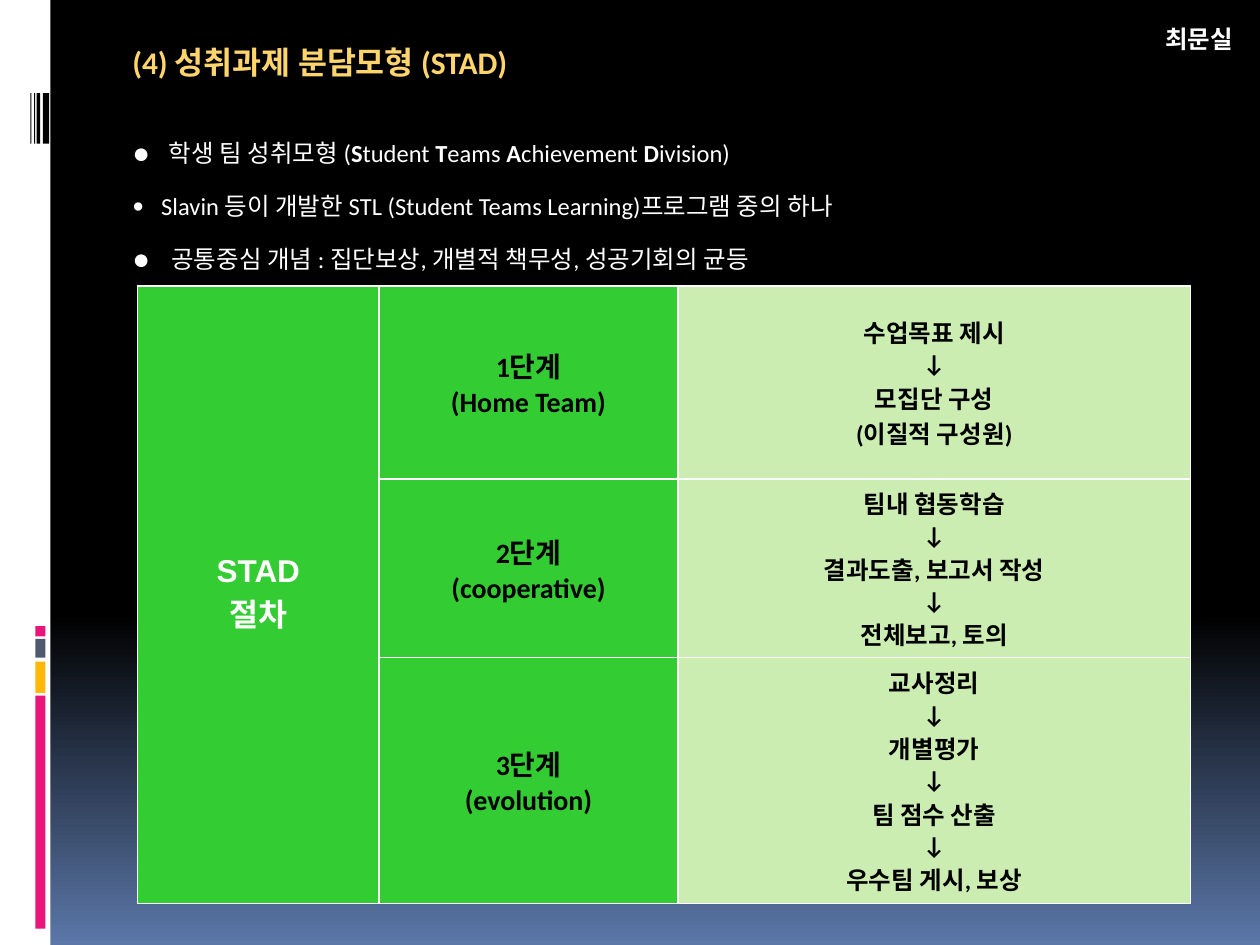
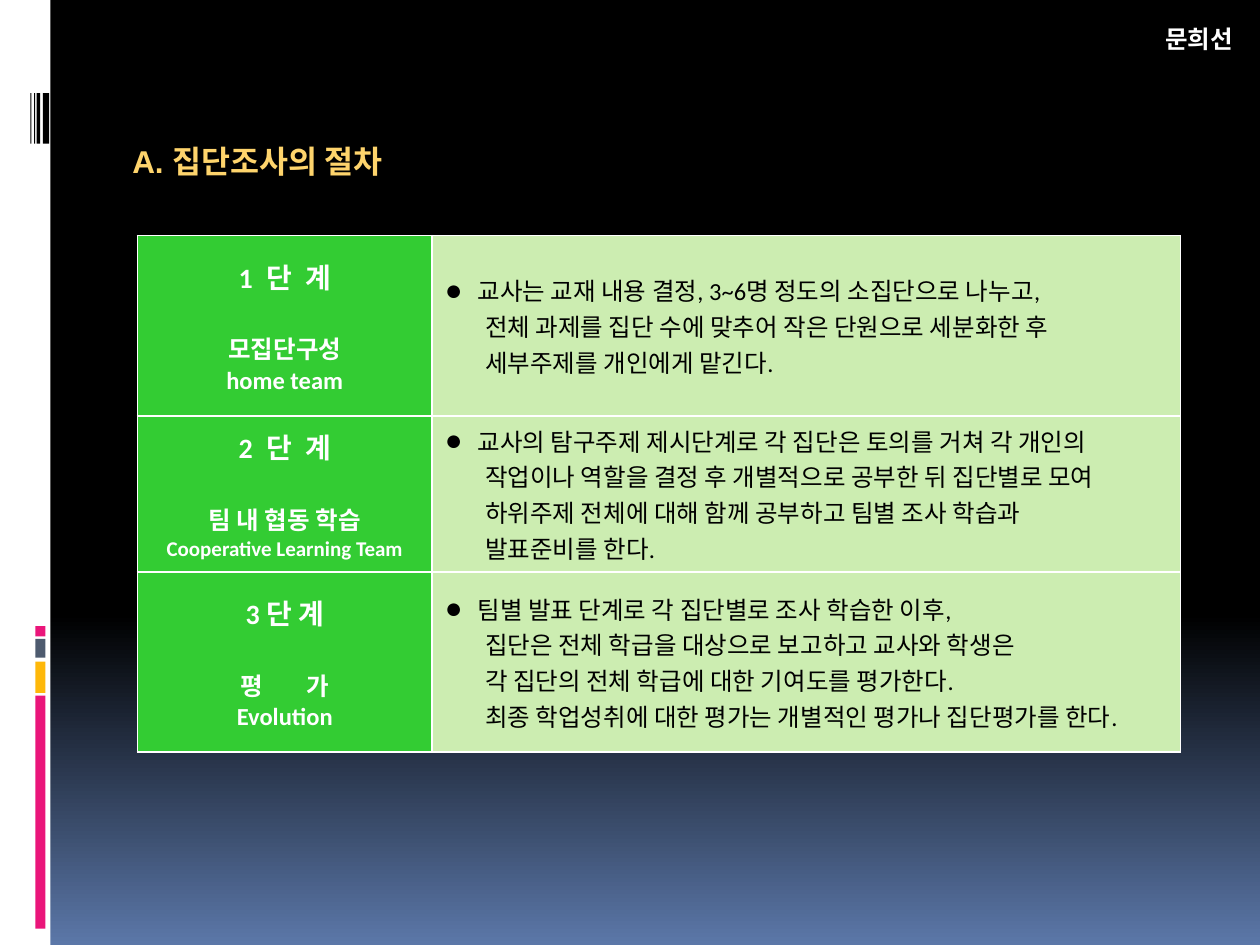
from dataclasses import dataclass, replace

from lxml.etree import SubElement
from pptx import Presentation
from pptx.dml.color import RGBColor
from pptx.enum.shapes import MSO_SHAPE
from pptx.enum.text import MSO_ANCHOR, PP_ALIGN
from pptx.oxml.ns import qn
from pptx.util import Inches, Pt

COLORS = {
    "black": "000000", "white": "FFFFFF", "sky": "5B77A8", "title": "FED46C",
    "pink": "EA157A", "amber": "FEB80A", "slate": "4E5B6F",
    "green": "33CC33", "pale": "CCEDB1",
}
GRID_COLS, GRID_ROWS = 100, 75
CELL = Inches(0.1)

BARCODE = [(3.4, 0.5), (2.9, 0.3), (2.7, 0.1), (2.4, 0.1)]  # column, width
STRIPES = [(55.2, 18.5, "pink"), (52.5, 2.5, "amber"),
           (50.7, 1.5, "slate"), (49.7, 0.8, "pink")]       # row, height, colour


@dataclass
class Line:
    """One paragraph; *stars* flip the weight, mark is a bullet size in percent."""
    text: str
    size: int = 14
    color: str = "black"
    bold: bool = True
    font: str = "Calibri"
    align: PP_ALIGN = PP_ALIGN.LEFT
    mark: int = 0
    indent: float = 0
    before: float = 0
    after: float = 0
    leading: float = 0
    spread: float = 0


class Deck:
    def __init__(self):
        self.prs = Presentation()
        self.prs.slide_width = CELL * GRID_COLS
        self.prs.slide_height = CELL * GRID_ROWS
        self.s = None
        self.set_background([(0, "black"), (65, "black"), (100, "sky")])

    def set_background(self, stops):
        master = self.prs.slide_master
        fill = master.background.fill
        fill.gradient()
        fill.gradient_angle = 270
        gs_lst = next(master.element.iter(qn("a:gsLst")))
        for gs in list(gs_lst):
            gs_lst.remove(gs)
        for pos, color in stops:
            gs = SubElement(gs_lst, qn("a:gs"), pos=str(pos * 1000))
            SubElement(gs, qn("a:srgbClr"), val=COLORS[color])

    def add_slide(self, author, title, title_bottom):
        self.s = self.prs.slides.add_slide(self.prs.slide_layouts[6])
        self.band(0, 0, 4, GRID_ROWS, "white")
        for col, width in BARCODE:
            self.band(col, 7.4, width, 4, "black")
        for row, height, color in STRIPES:
            self.band(2.8, row, 0.8, height, color)
        self.text(9.4, title_bottom - 6, 85, 6, [replace(title, size=18, color="title", leading=25)])
        self.text(91.4, 0, 8.6, 4.7, [Line(author, color="white", leading=25)])

    def band(self, col, row, width, height, color):
        sp = self.s.shapes.add_shape(MSO_SHAPE.RECTANGLE, *self.place(col, row, width, height))
        sp.shadow.inherit = False
        sp.fill.solid()
        sp.fill.fore_color.rgb = self.rgb(color)
        sp.line.fill.background()

    def text(self, col, row, width, height, lines):
        sp = self.s.shapes.add_textbox(*self.place(col, row, width, height))
        tf = sp.text_frame
        tf.word_wrap = True
        tf.vertical_anchor = MSO_ANCHOR.BOTTOM
        tf.margin_left = Inches(0.11)
        self.set_lines(tf, lines)

    def table(self, col, row, widths, heights, rows, fills):
        """Rows hold lists of lines; a None cell is merged into the one above."""
        frame = self.s.shapes.add_table(
            len(heights), len(widths), *self.place(col, row, sum(widths), sum(heights)))
        table = frame.table
        table.first_row = table.horz_banding = False
        for column, width in zip(table.columns, widths):
            column.width = int(CELL * width)
        for i, (height, cells) in enumerate(zip(heights, rows)):
            table.rows[i].height = int(CELL * height)
            for j, (lines, fill) in enumerate(zip(cells, fills)):
                cell = table.cell(i, j)
                self.border(cell)
                cell.fill.solid()
                cell.fill.fore_color.rgb = self.rgb(fill)
                cell.vertical_anchor = MSO_ANCHOR.MIDDLE
                if lines:
                    self.set_lines(cell.text_frame, lines)
        for j in range(len(widths)):
            covered = [i for i, cells in enumerate(rows) if cells[j] is None]
            if covered:
                table.cell(covered[0] - 1, j).merge(table.cell(covered[-1], j))

    def set_lines(self, tf, lines):
        for i, line in enumerate(lines):
            p = tf.add_paragraph() if i else tf.paragraphs[0]
            self.format_paragraph(p, line)
            if line.spread:
                r = self.run(p, line.text[:-1], line)
                r._r.get_or_add_rPr().set("spc", str(int(line.spread * 100)))
                self.run(p, line.text[-1], line)
                continue
            for k, part in enumerate(line.text.split("*")):
                if part:
                    self.run(p, part, line, line.bold != bool(k % 2))

    def format_paragraph(self, p, line):
        p.alignment = line.align
        p.space_before, p.space_after = Pt(line.before), Pt(line.after)
        if line.leading:
            p.line_spacing = Pt(line.leading)
        pPr = p._p.get_or_add_pPr()
        if line.indent:
            pPr.set("marL", str(Inches(line.indent)))
        if line.mark:
            pPr.set("indent", str(-Inches(line.indent)))
            SubElement(pPr, qn("a:buSzPct"), val=str(line.mark * 1000))
            SubElement(pPr, qn("a:buFont"), typeface="Arial")
            SubElement(pPr, qn("a:buChar"), char="●")

    def run(self, p, text, line, bold=True):
        r = p.add_run()
        r.text = text
        r.font.name, r.font.size, r.font.bold = line.font, Pt(line.size), bold
        r.font.color.rgb = self.rgb(line.color)
        return r

    @staticmethod
    def border(cell):
        tcPr = cell._tc.get_or_add_tcPr()
        for side in ("lnL", "lnR", "lnT", "lnB"):
            ln = SubElement(tcPr, qn("a:" + side), w=str(Pt(1)))
            SubElement(SubElement(ln, qn("a:solidFill")), qn("a:srgbClr"), val=COLORS["white"])

    @staticmethod
    def place(*cells):
        return [int(CELL * n) for n in cells]

    @staticmethod
    def rgb(color):
        return RGBColor.from_string(COLORS[color])


def centered(*texts, **style):
    return [Line(text, align=PP_ALIGN.CENTER, **style) for text in texts]


def flow(*steps):
    """Steps stacked with a down arrow between them."""
    return centered(*"|↓|".join(steps).split("|"))


def stage(name, topic, english, english_size=14, name_spread=0, topic_spread=0):
    return (centered(name, size=16, color="white", after=19.5, spread=name_spread)
            + centered(topic, color="white", spread=topic_spread)
            + centered(english, size=english_size, color="white"))


def explanation(first, *rest):
    return ([Line(first, bold=False, mark=120, indent=0.26)]
            + [Line(text, bold=False, indent=0.32) for text in rest])


def point(text, mark, indent, before=13.4):
    return Line(text, color="white", bold=False, mark=mark, indent=indent, before=before)


def stad_slide(deck):
    deck.add_slide("최문실", Line("(4) 성취과제 분담모형 (STAD)"), 6.9)
    deck.text(9.4, 9, 85, 13.2, [
        point("학생 팀 성취모형 (*S*tudent *T*eams *A*chievement *D*ivision)", 120, 0.29, 0),
        point("Slavin 등이 개발한 STL (Student Teams Learning)프로그램 중의 하나", 79, 0.23),
        point("공통중심 개념 : 집단보상, 개별적 책무성, 성공기회의 균등", 120, 0.31),
    ])
    heading = centered("STAD", "절차", size=18, color="white", font="Arial")
    deck.table(10.9, 22.7, [19.2, 23.7, 40.7], [15.3, 14.2, 19.5], [
        [heading, centered("1단계", "(Home Team)", size=16),
         flow("수업목표 제시", "모집단 구성") + centered("(이질적 구성원)")],
        [None, centered("2단계", "(cooperative)", size=16),
         flow("팀내 협동학습", "결과도출, 보고서 작성", "전체보고, 토의")],
        [None, centered("3단계", "(evolution)", size=16),
         flow("교사정리", "개별평가", "팀 점수 산출", "우수팀 게시, 보상")],
    ], ["green", "green", "pale"])


def investigation_slide(deck):
    deck.add_slide("문희선", Line("A. 집단조사의 절차", font="Arial"), 14.8)
    deck.table(10.9, 18.7, [23.4, 59.4], [14.3, 12.4, 14.3], [
        [stage("1 단 계", "모집단구성", "home team", name_spread=2),
         explanation("교사는 교재 내용 결정, 3~6명 정도의 소집단으로 나누고,",
                     "전체 과제를 집단 수에 맞추어 작은 단원으로 세분화한 후",
                     "세부주제를 개인에게 맡긴다.")],
        [stage("2 단 계", "팀 내 협동 학습", "Cooperative Learning Team", 12, name_spread=2),
         explanation("교사의 탐구주제 제시단계로 각 집단은 토의를 거쳐 각 개인의",
                     "작업이나 역할을 결정 후 개별적으로 공부한 뒤 집단별로 모여",
                     "하위주제 전체에 대해 함께 공부하고 팀별 조사 학습과",
                     "발표준비를 한다.")],
        [stage("3 단 계", "평 가", "Evolution", topic_spread=11),
         explanation("팀별 발표 단계로 각 집단별로 조사 학습한 이후,",
                     "집단은 전체 학급을 대상으로 보고하고 교사와 학생은",
                     "각 집단의 전체 학급에 대한 기여도를 평가한다.",
                     "최종 학업성취에 대한 평가는 개별적인 평가나 집단평가를 한다.")],
    ], ["green", "pale"])


def main():
    deck = Deck()
    stad_slide(deck)
    investigation_slide(deck)
    deck.prs.save("out.pptx")


if __name__ == "__main__":
    main()
